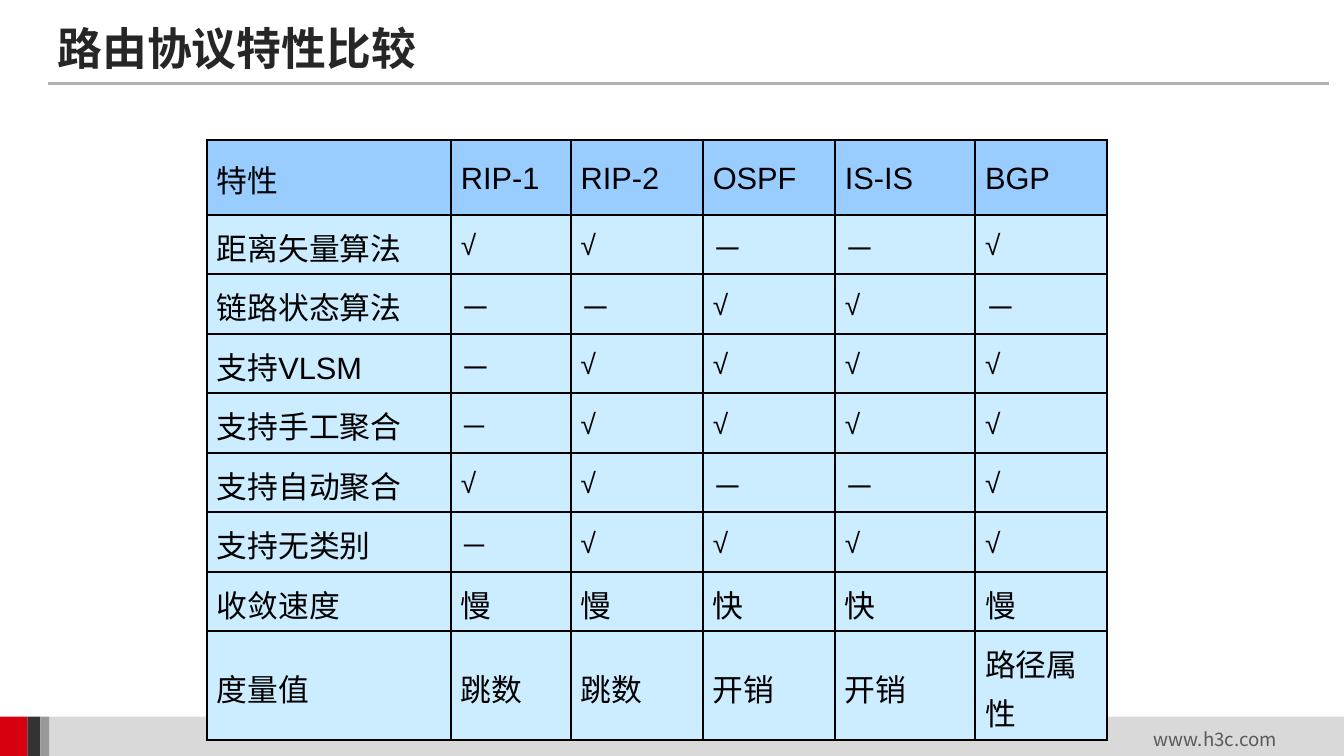
import pptx
import pptx.dml.color
import pptx.enum.shapes
import pptx.enum.text
import pptx.oxml.ns
import pptx.util
from lxml import etree

Cm = pptx.util.Cm
Pt = pptx.util.Pt
MIDDLE = pptx.enum.text.MSO_ANCHOR.MIDDLE

COLORS = {
    "title": "262626", "rule": "B2B2B2", "footer_text": "595959",
    "footer": "D9D9D9", "red": "D7000F", "dark": "333333", "gray": "999999",
    "header": "99CCFF", "body": "CCECFF", "black": "000000",
}
LATIN = "Arial"
CJK = "Noto Sans CJK SC"

COL_WIDTHS = [6.15, 3.02, 3.33, 3.33, 3.53, 3.32]
ROW_HEIGHTS = [1.88] + [1.5] * 7 + [2.73]
PROTOCOLS = [
    ["特性", "RIP-1", "RIP-2", "OSPF", "IS-IS", "BGP"],
    ["距离矢量算法", "√", "√", "－", "－", "√"],
    ["链路状态算法", "－", "－", "√", "√", "－"],
    ["支持VLSM", "－", "√", "√", "√", "√"],
    ["支持手工聚合", "－", "√", "√", "√", "√"],
    ["支持自动聚合", "√", "√", "－", "－", "√"],
    ["支持无类别", "－", "√", "√", "√", "√"],
    ["收敛速度", "慢", "慢", "快", "快", "慢"],
    ["度量值", "跳数", "跳数", "开销", "开销", "路径属性"],
]
SMALL_DASH_ROWS = {"支持手工聚合", "支持无类别"}


def rgb(name):
    return pptx.dml.color.RGBColor.from_string(COLORS[name])


def sub(parent, tag, **attrs):
    return etree.SubElement(parent, pptx.oxml.ns.qn(tag), **attrs)


def format_text(tf, size, color, font, bold=False):
    for r in tf.paragraphs[0].runs:
        r.font.size = Pt(size)
        r.font.bold = bold
        r.font.color.rgb = rgb(color)
        r.font.name = font
        sub(r.font._element, "a:ea", typeface=CJK)


def add_text(s, text, left, top, width, height, size, color, bold=False, wrap=True):
    tf = s.shapes.add_textbox(Cm(left), Cm(top), Cm(width), Cm(height)).text_frame
    tf.word_wrap = wrap
    tf.vertical_anchor = MIDDLE
    tf.text = text
    format_text(tf, size, color, CJK, bold)


def add_bar(s, left, width, color):
    sp = s.shapes.add_shape(pptx.enum.shapes.MSO_SHAPE.RECTANGLE,
                            Cm(left), Cm(18.06), Cm(width), Cm(1))
    sp.shadow.inherit = False
    sp.fill.solid()
    sp.fill.fore_color.rgb = rgb(color)
    sp.line.fill.background()


def add_rule(s, left, right, y):
    line = s.shapes.add_connector(pptx.enum.shapes.MSO_CONNECTOR.STRAIGHT,
                                  Cm(left), Cm(y), Cm(right), Cm(y))
    line.line.color.rgb = rgb("rule")
    line.line.width = Pt(2.25)
    sub(line._element.spPr, "a:effectLst")


def add_borders(cell):
    tc_pr = cell._tc.get_or_add_tcPr()
    for side in ("a:lnL", "a:lnR", "a:lnT", "a:lnB"):
        ln = sub(tc_pr, side, w=str(Pt(1.5)))
        sub(sub(ln, "a:solidFill"), "a:srgbClr", val=COLORS["black"])


def fill_cell(cell, text, size, fill):
    add_borders(cell)
    cell.fill.solid()
    cell.fill.fore_color.rgb = rgb(fill)
    cell.vertical_anchor = MIDDLE
    cell.text_frame.text = text
    cell.text_frame.paragraphs[0].line_spacing = 1.1
    format_text(cell.text_frame, size, "black", LATIN)


def add_protocol_table(s, left, top):
    table = s.shapes.add_table(len(PROTOCOLS), len(COL_WIDTHS), Cm(left), Cm(top),
                               Cm(sum(COL_WIDTHS)), Cm(sum(ROW_HEIGHTS))).table
    table.horz_banding = False
    for column, width in zip(table.columns, COL_WIDTHS):
        column.width = Cm(width)
    for i, (row, height) in enumerate(zip(PROTOCOLS, ROW_HEIGHTS)):
        table.rows[i].height = Cm(height)
        for j, text in enumerate(row):
            small = text == "√" or (text == "－" and row[0] in SMALL_DASH_ROWS)
            fill_cell(table.cell(i, j), text, 20 if small else 22,
                      "body" if i else "header")


def main():
    prs = pptx.Presentation()
    prs.slide_width, prs.slide_height = Cm(33.87), Cm(19.05)
    s = prs.slides.add_slide(prs.slide_layouts[6])

    # Footer band
    add_bar(s, 1.24, 32.63, "footer")
    add_bar(s, 0, 0.69, "red")
    add_bar(s, 0.69, 0.33, "dark")
    add_bar(s, 1.02, 0.22, "gray")
    add_text(s, "www.h3c.com", 28.83, 18.21, 3.63, 0.84, 13.3, "footer_text", wrap=False)

    # Title and rule
    add_rule(s, 1.2, 33.5, 2.1)
    add_text(s, "路由协议特性比较", 1.2, 0.36, 28, 1.7, 32, "title", bold=True)

    # Comparison table
    add_protocol_table(s, 5.21, 3.53)

    prs.save("out.pptx")


if __name__ == "__main__":
    main()
